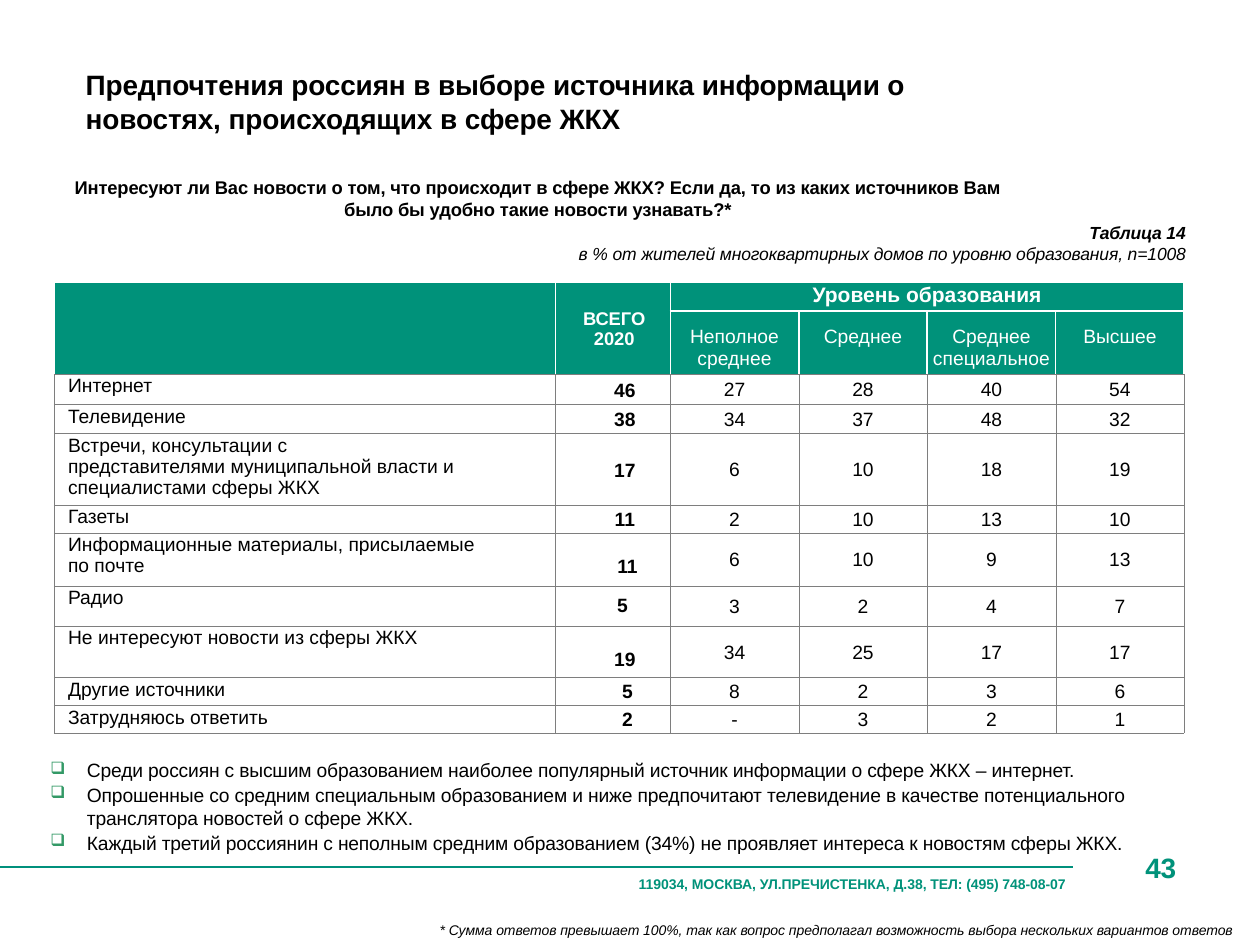
from lxml.etree import SubElement
from pptx import Presentation
from pptx.dml.color import RGBColor
from pptx.enum.shapes import MSO_CONNECTOR
from pptx.enum.text import MSO_ANCHOR as Anchor, PP_ALIGN as Align
from pptx.oxml.ns import qn
from pptx.util import Inches, Pt

THEME = {
    "font": "Arial", "black": "000000", "white": "FFFFFF", "green": "00927A",
    "rule": "00907C", "bullet": "339966", "grid": "7E7E7E",
    "title": 16, "group": 12, "body": 11, "question": 10.5, "caption": 10, "small": 8,
}
TITLE = "Предпочтения россиян в выборе источника информации о новостях, происходящих в сфере ЖКХ"
QUESTION = [
    "Интересуют ли Вас новости о том, что происходит в сфере ЖКХ? Если да, то из каких источников Вам",
    "было бы удобно такие новости узнавать?*",
]
CAPTION = ["Таблица 14", "в % от жителей многоквартирных домов по уровню образования, n=1008"]
TOTAL = "ВСЕГО\n2020"
GROUP = "Уровень образования"
LEVELS = ["Неполное среднее", "Среднее", "Среднее специальное", "Высшее"]
SOURCES = [
    ("Интернет", 46, [27, 28, 40, 54]),
    ("Телевидение", 38, [34, 37, 48, 32]),
    ("Встречи, консультации с\nпредставителями муниципальной власти и специалистами сферы ЖКХ",
     17, [6, 10, 18, 19]),
    ("Газеты", 11, [2, 10, 13, 10]),
    ("Информационные материалы, присылаемые по почте", 11, [6, 10, 9, 13]),
    ("Радио", 5, [3, 2, 4, 7]),
    ("Не интересуют новости из сферы ЖКХ", 19, [34, 25, 17, 17]),
    ("Другие источники", 5, [8, 2, 3, 6]),
    ("Затрудняюсь ответить", 2, ["-", 3, 2, 1]),
]
COLUMN_WIDTHS = [3.98, 0.91] + [1.02] * len(LEVELS)
ROW_HEIGHTS = [0.23, 0.5, 0.24, 0.23, 0.57, 0.22, 0.42, 0.32, 0.41, 0.22, 0.22]
TOTAL_INSETS = [0.02, 0.02, 0.02, 0.01, 0.12, 0, 0.12, 0.01, 0.01]
TOTAL_INDENTS = [0.19, 0.19, 0.19, 0.19, 0.23, 0.15, 0.19, 0.23, 0.23]
FINDINGS = [
    "Среди россиян с высшим образованием наиболее популярный источник информации о сфере ЖКХ – интернет.",
    "Опрошенные со средним специальным образованием и ниже предпочитают телевидение в качестве "
    "потенциального транслятора новостей о сфере ЖКХ.",
    "Каждый третий россиянин с неполным средним образованием (34%) не проявляет интереса к новостям сферы ЖКХ.",
]
ADDRESS = "119034, МОСКВА, УЛ.ПРЕЧИСТЕНКА, Д.38, ТЕЛ: (495) 748-08-07"
FOOTNOTE = ("* Сумма ответов превышает 100%, так как вопрос предполагал возможность "
            "выбора нескольких вариантов ответов")


def color(name):
    return RGBColor.from_string(THEME[name])


def style(para, size, ink="black", bold=False, italic=False, align=Align.LEFT,
          left=0, right=0, hanging=0, spacing=0):
    para.alignment = align
    props = para._p.get_or_add_pPr()
    for key, value in (("marL", left), ("marR", right), ("indent", hanging)):
        props.set(key, str(Inches(value)))
    for span in para.runs:
        font = span.font
        font.name, font.size = THEME["font"], Pt(THEME[size])
        font.bold, font.italic = bold, italic
        font.color.rgb = color(ink)
        if spacing:
            span._r.get_or_add_rPr().set("spc", str(spacing))


def add_text(page, place, text, size, inset=0, **look):
    box = page.shapes.add_textbox(*map(Inches, place))
    frame = box.text_frame
    frame.word_wrap = True
    frame.margin_left = frame.margin_right = frame.margin_bottom = 0
    frame.margin_top = Inches(inset)
    frame.text = text
    for para in frame.paragraphs:
        style(para, size, **look)
    return frame


def add_bullet(para):
    props = para._p.get_or_add_pPr()
    tint = SubElement(props, qn("a:buClr"))
    SubElement(tint, qn("a:srgbClr"), val=THEME["bullet"])
    SubElement(props, qn("a:buSzPct"), val="88000")
    SubElement(props, qn("a:buChar"), char="❑")


def add_border(cell, side, ink, width):
    line = SubElement(cell._tc.get_or_add_tcPr(), qn("a:ln" + side), w=str(Pt(width)))
    fill = SubElement(line, qn("a:solidFill"))
    SubElement(fill, qn("a:srgbClr"), val=THEME[ink])


def fill_cell(cell, text, size, top=0.01, anchor=Anchor.MIDDLE, **look):
    cell.text = str(text)
    cell.vertical_anchor = anchor
    cell.margin_top = Inches(top)
    for para in cell.text_frame.paragraphs:
        style(para, size, **look)


def add_source_table(page):
    shape = page.shapes.add_table(
        len(ROW_HEIGHTS), len(COLUMN_WIDTHS), Inches(0.43), Inches(2.24),
        Inches(sum(COLUMN_WIDTHS)), Inches(sum(ROW_HEIGHTS)))
    table = shape.table
    for column, width in zip(table.columns, COLUMN_WIDTHS):
        column.width = Inches(width)
    for row, height in zip(table.rows, ROW_HEIGHTS):
        row.height = Inches(height)
    for column in (0, 1):
        table.cell(0, column).merge(table.cell(1, column))
    table.cell(0, 2).merge(table.cell(0, len(COLUMN_WIDTHS) - 1))

    for index, row in enumerate(table.rows):
        for column, cell in enumerate(row.cells):
            header = index < 2
            above_body = index == 1 or column < 2
            for side in "LRTB":
                white = header and not (side == "B" and above_body)
                add_border(cell, side, "white" if white else "grid", 1 if white else 0.25)
            cell.margin_left = cell.margin_right = cell.margin_top = cell.margin_bottom = 0
            if header:
                cell.fill.solid()
                cell.fill.fore_color.rgb = color("green")
            else:
                cell.fill.background()
            if cell.is_spanned or (index, column) == (0, 0):
                SubElement(cell.text_frame.paragraphs[0]._p, qn("a:endParaRPr"), sz="800")

    heading = {"ink": "white", "align": Align.CENTER}
    fill_cell(table.cell(0, 1), TOTAL, "question", bold=True, left=0.02, **heading)
    fill_cell(table.cell(0, 2), GROUP, "group", bold=True, anchor=Anchor.TOP, **heading)
    for column, level in enumerate(LEVELS, 2):
        fill_cell(table.cell(1, column), level, "body", top=0.12, anchor=Anchor.TOP, **heading)

    rows = zip(SOURCES, TOTAL_INSETS, TOTAL_INDENTS)
    for index, ((label, total, shares), inset, indent) in enumerate(rows, 2):
        fill_cell(table.cell(index, 0), label, "body", anchor=Anchor.TOP, left=0.11, right=0.55)
        fill_cell(table.cell(index, 1), total, "body", top=inset, bold=True,
                  align=Align.CENTER, left=indent)
        for column, share in enumerate(shares, 2):
            fill_cell(table.cell(index, column), share, "body", align=Align.CENTER)


def main():
    deck = Presentation()
    deck.slide_width, deck.slide_height = Inches(10), Inches(7.5)
    page = deck.slides.add_slide(deck.slide_layouts[6])

    rule = page.shapes.add_connector(
        MSO_CONNECTOR.STRAIGHT, 0, Inches(6.88), Inches(8.52), Inches(6.88))
    rule.line.color.rgb = color("rule")
    rule.line.width = Pt(1.2)
    SubElement(rule._element.spPr, qn("a:effectLst"))

    add_text(page, (0.68, 0.53, 6.61, 0.56), TITLE, "title", inset=0.01, bold=True, spacing=-5)
    add_text(page, (9.05, 6.75, 0.4, 0.28), "43", "title", ink="green", bold=True,
             left=0.04, spacing=-5)
    add_text(page, (5.06, 6.95, 3.6, 0.15), ADDRESS, "small", ink="green", bold=True,
             left=0.01, spacing=-5)
    add_text(page, (3.48, 7.31, 6.5, 0.15), FOOTNOTE, "small", italic=True, left=0.01, spacing=-5)

    question = add_text(page, (0.5, 1.39, 8.91, 0.72), "\n".join(QUESTION + CAPTION), "question",
                        inset=0.01, bold=True, align=Align.CENTER, right=1.37, spacing=-5)
    number, note = question.paragraphs[len(QUESTION):]
    style(number, "caption", bold=True, italic=True, align=Align.RIGHT, spacing=-5)
    style(note, "caption", italic=True, align=Align.RIGHT, spacing=-5)
    number.space_before = Pt(0.6)

    add_source_table(page)

    findings = add_text(page, (0.39, 6, 8.81, 0.78), "\n".join(FINDINGS), "body",
                        inset=0.02, left=0.3, hanging=-0.29, spacing=-10)
    for index, para in enumerate(findings.paragraphs):
        if index:
            para.space_before = Pt(1)
        add_bullet(para)

    deck.save("out.pptx")


if __name__ == "__main__":
    main()
